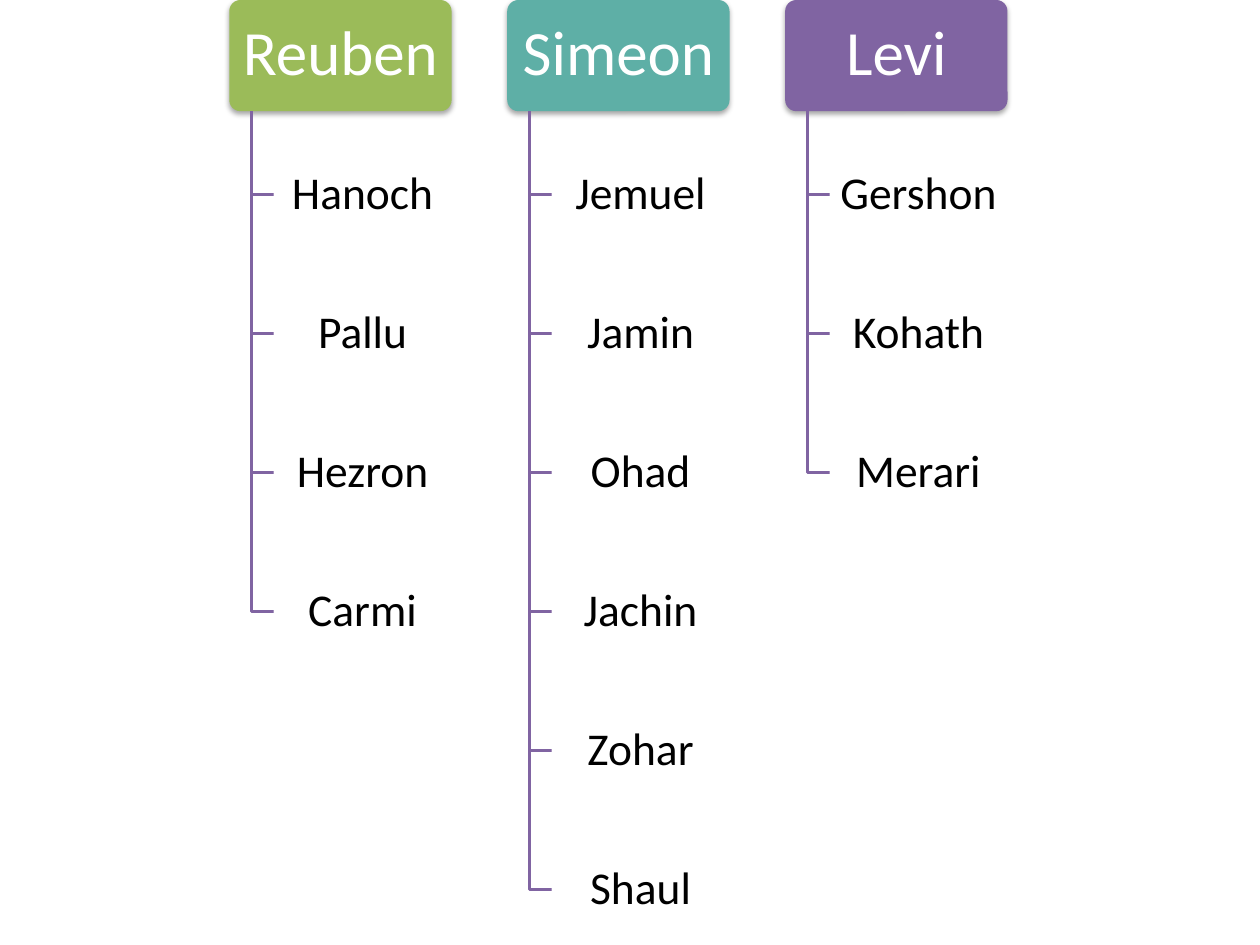
from dataclasses import dataclass

from lxml import etree
from pptx import Presentation
from pptx import util as u
from pptx.dml.color import RGBColor
from pptx.enum import shapes, text
from pptx.oxml import ns


@dataclass(frozen=True)
class Theme:
    font: str = "Calibri"
    head_size: int = 36
    son_size: int = 26
    head_text: str = "FFFFFF"
    son_text: str = "000000"
    son_fill: str = "FFFFFF"
    branch: str = "8064A2"
    branch_width: int = 2
    shadow: str = "000000"


@dataclass(frozen=True)
class Family:
    father: str
    color: str
    sons: tuple[str, ...]


THEME = Theme()
FAMILIES = (
    Family("Reuben", "9BBB59", ("Hanoch", "Pallu", "Hezron", "Carmi")),
    Family("Simeon", "5EAFA6",
           ("Jemuel", "Jamin", "Ohad", "Jachin", "Zohar", "Shaul")),
    Family("Levi", "8064A2", ("Gershon", "Kohath", "Merari")),
)

SLIDE_WIDTH, SLIDE_HEIGHT = 10, 7.5
GENERATIONS = 1 + max(len(family.sons) for family in FAMILIES)
BOX_HEIGHT = SLIDE_HEIGHT / (GENERATIONS + (GENERATIONS - 1) / 4)
ROW_STEP = BOX_HEIGHT * 1.25
HEAD_WIDTH = BOX_HEIGHT * 2
COLUMN_STEP = HEAD_WIDTH * 1.25
FIRST_LEFT = 1.82
STEM_INDENT = HEAD_WIDTH * 0.1
SON_INDENT = HEAD_WIDTH * 0.2


def write(shape, words: str, *, size: int, color: str,
          inset_x: float, inset_y: float) -> None:
    frame = shape.text_frame
    frame.word_wrap = True
    frame.vertical_anchor = text.MSO_ANCHOR.MIDDLE
    frame.margin_left = frame.margin_right = u.Inches(inset_x)
    frame.margin_top = frame.margin_bottom = u.Inches(inset_y)
    paragraph = frame.paragraphs[0]
    paragraph.alignment = text.PP_ALIGN.CENTER
    paragraph.line_spacing = 0.9
    run = paragraph.add_run()
    run.text = words
    run.font.name = THEME.font
    run.font.size = u.Pt(size)
    run.font.color.rgb = RGBColor.from_string(color)


def draw_box(slide, left: float, top: float, width: float, fill: str):
    box = slide.shapes.add_shape(
        shapes.MSO_SHAPE.ROUNDED_RECTANGLE, u.Inches(left), u.Inches(top),
        u.Inches(width), u.Inches(BOX_HEIGHT))
    box.adjustments[0] = 0.1
    box.shadow.inherit = False
    box.fill.solid()
    box.fill.fore_color.rgb = RGBColor.from_string(fill)
    box.line.fill.background()
    return box


def add_color_alpha(color_element, percent: int) -> None:
    etree.SubElement(color_element, ns.qn("a:alpha"), val=str(percent * 1000))


def cast_shadow(box) -> None:
    effects = box._element.spPr.find(ns.qn("a:effectLst"))
    shadow = etree.SubElement(
        effects, ns.qn("a:outerShdw"), blurRad=str(u.Pt(3.1)),
        dist=str(u.Pt(1.8)), dir="5400000", rotWithShape="0")
    color = etree.SubElement(shadow, ns.qn("a:srgbClr"), val=THEME.shadow)
    add_color_alpha(color, 35)


def draw_branch(slide, stem: float, end_x: float, end_y: float) -> None:
    builder = slide.shapes.build_freeform(u.Inches(stem), u.Inches(BOX_HEIGHT))
    builder.add_line_segments(
        [(u.Inches(stem), u.Inches(end_y)), (u.Inches(end_x), u.Inches(end_y))],
        close=False)
    branch = builder.convert_to_shape()
    branch.shadow.inherit = False
    branch.fill.background()
    branch.line.color.rgb = RGBColor.from_string(THEME.branch)
    branch.line.width = u.Pt(THEME.branch_width)


def draw_son(slide, name: str, left: float, top: float) -> None:
    box = draw_box(slide, left, top, HEAD_WIDTH - SON_INDENT, THEME.son_fill)
    add_color_alpha(next(box._element.spPr.iter(ns.qn("a:srgbClr"))), 90)
    write(box, name, size=THEME.son_size, color=THEME.son_text,
          inset_x=0.05, inset_y=0.04)


def draw_family(slide, family: Family, left: float) -> None:
    head = draw_box(slide, left, 0, HEAD_WIDTH, family.color)
    cast_shadow(head)
    write(head, family.father, size=THEME.head_size, color=THEME.head_text,
          inset_x=0.07, inset_y=0.05)
    son_left = left + SON_INDENT
    for generation, son in enumerate(family.sons, start=1):
        top = generation * ROW_STEP
        draw_branch(slide, left + STEM_INDENT, son_left, top + BOX_HEIGHT / 2)
        draw_son(slide, son, son_left, top)


def main() -> None:
    deck = Presentation()
    deck.slide_width = u.Inches(SLIDE_WIDTH)
    deck.slide_height = u.Inches(SLIDE_HEIGHT)
    slide = deck.slides.add_slide(deck.slide_layouts[6])
    for column, family in enumerate(FAMILIES):
        draw_family(slide, family, FIRST_LEFT + column * COLUMN_STEP)
    deck.save("out.pptx")


if __name__ == "__main__":
    main()
